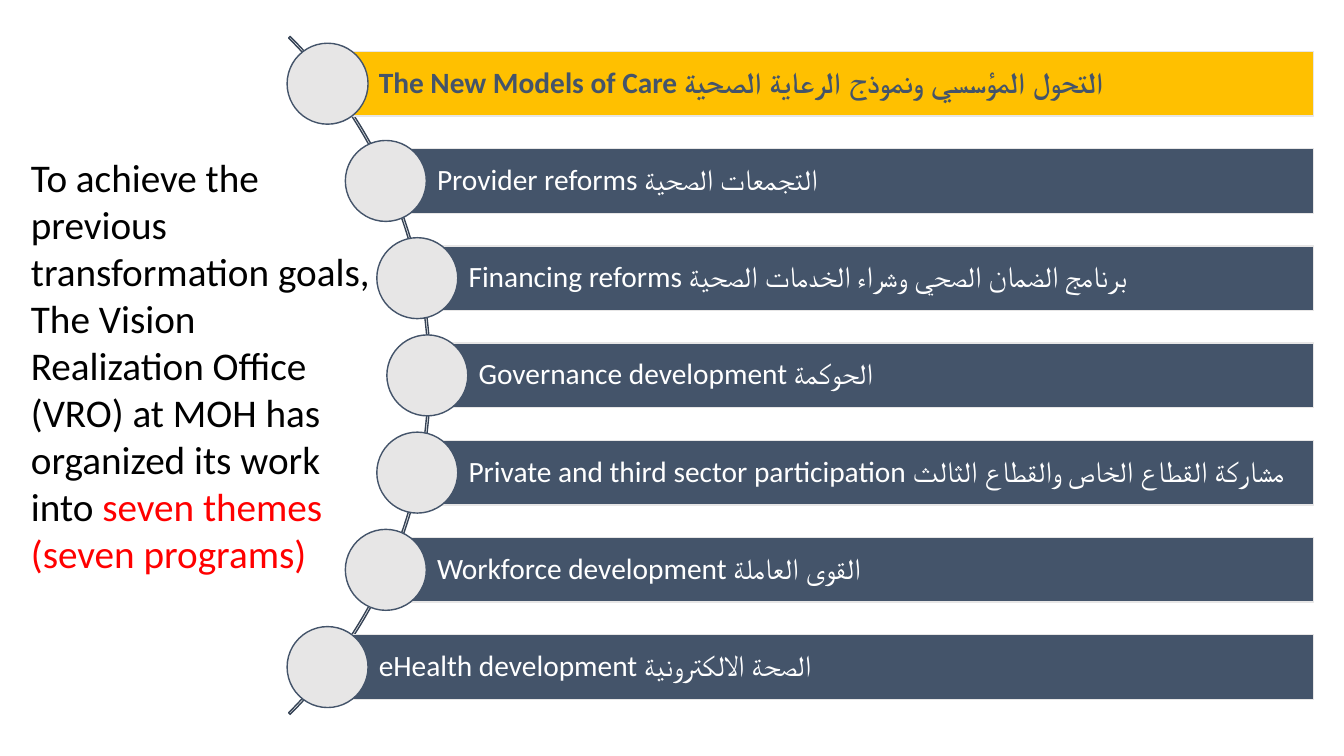
from math import sqrt

from pptx import Presentation
from pptx.dml.color import RGBColor
from pptx.enum.shapes import MSO_SHAPE
from pptx.enum.text import MSO_ANCHOR, PP_ALIGN
from pptx.util import Cm, Pt

SLATE = RGBColor(0x44, 0x54, 0x6A)
DARK_SLATE = RGBColor(0x36, 0x43, 0x55)
GOLD = RGBColor(0xFF, 0xC0, 0x00)
LIGHT_GREY = RGBColor(0xE7, 0xE6, 0xE6)
WHITE = RGBColor(0xFF, 0xFF, 0xFF)
BLACK = RGBColor(0x00, 0x00, 0x00)
RED = RGBColor(0xFF, 0x00, 0x00)

THEMES = [
    "The New Models of Care التحول المؤسسي ونموذج الرعاية الصحية",
    "Provider reforms التجمعات الصحية",
    "Financing reforms برنامج الضمان الصحي وشراء الخدمات الصحية",
    "Governance development الحوكمة",
    "Private and third sector participation مشاركة القطاع الخاص والقطاع الثالث",
    "Workforce development القوى العاملة",
    "eHealth development الصحة الالكترونية",
]
INTRO = [
    ("To achieve the previous transformation goals, The Vision Realization Office "
     "(VRO) at MOH has organized its work into ", BLACK),
    ("seven themes (seven programs)", RED),
]

# All lengths in centimetres
ARC_X, ARC_Y, ARC_SIZE = -1.23, 9.46, 24.16
BULLET_RADIUS = 12.0
ROW_PITCH = 2.45
BAR_RIGHT, BAR_HEIGHT = 33.1, 1.63
CIRCLE_SIZE = 2.04


def add_outlined(kind, left, top, width, height, fill, line):
    """Add a shape with a 1 pt outline; a fill of None leaves it empty."""
    shape = page.shapes.add_shape(kind, Cm(left), Cm(top), Cm(width), Cm(height))
    shape.shadow.inherit = False
    if fill is None:
        shape.fill.background()
    else:
        shape.fill.solid()
        shape.fill.fore_color.rgb = fill
    shape.line.color.rgb = line
    shape.line.width = Pt(1)
    return shape


def add_span(para, text, size, color, bold=False):
    span = para.add_run()
    span.text = text
    for name, value in {"name": "Calibri", "size": Pt(size), "bold": bold}.items():
        setattr(span.font, name, value)
    span.font.color.rgb = color


deck = Presentation()
deck.slide_width, deck.slide_height = Cm(33.87), Cm(19.05)
page = deck.slides.add_slide(deck.slide_layouts[6])

arc = add_outlined(MSO_SHAPE.BLOCK_ARC, ARC_X - ARC_SIZE / 2, ARC_Y - ARC_SIZE / 2,
                   ARC_SIZE, ARC_SIZE, None, DARK_SLATE)
# Start and end angles (315° and 45°), then thickness
for index, value in enumerate([189, 27, 0.0023]):
    arc.adjustments[index] = value

bar_format = {
    "word_wrap": True,
    "vertical_anchor": MSO_ANCHOR.MIDDLE,
    "margin_left": Cm(1.29),
    "margin_top": Cm(0.15),
    "margin_right": Cm(0.15),
    "margin_bottom": Cm(0.15),
}
for row, theme in enumerate(THEMES):
    offset = (row - len(THEMES) // 2) * ROW_PITCH
    center_x = ARC_X + sqrt(BULLET_RADIUS ** 2 - offset ** 2)
    center_y = ARC_Y + offset
    highlighted = row == 0

    bar = add_outlined(MSO_SHAPE.RECTANGLE, center_x, center_y - BAR_HEIGHT / 2,
                       BAR_RIGHT - center_x, BAR_HEIGHT,
                       GOLD if highlighted else SLATE, LIGHT_GREY)
    for name, value in bar_format.items():
        setattr(bar.text_frame, name, value)
    para = bar.text_frame.paragraphs[0]
    para.alignment = PP_ALIGN.LEFT
    para.line_spacing = 0.9
    add_span(para, theme, 21, SLATE if highlighted else WHITE, highlighted)

    add_outlined(MSO_SHAPE.OVAL, center_x - CIRCLE_SIZE / 2, center_y - CIRCLE_SIZE / 2,
                 CIRCLE_SIZE, CIRCLE_SIZE, LIGHT_GREY, SLATE)

intro_box = page.shapes.add_textbox(Cm(0.53), Cm(3.73), Cm(9.14), Cm(11.63))
intro_box.text_frame.word_wrap = True
for text, color in INTRO:
    add_span(intro_box.text_frame.paragraphs[0], text, 28, color)

deck.save("out.pptx")
